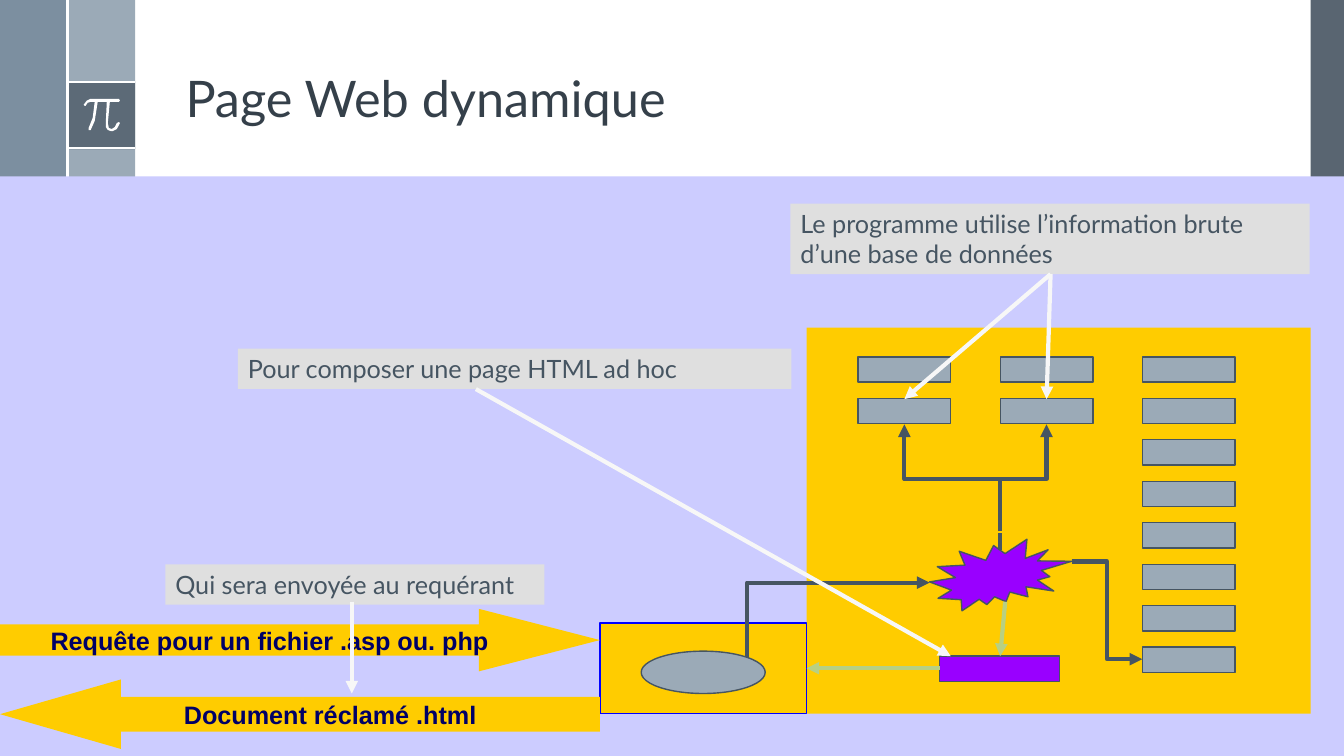
from lxml import etree
from pptx import Presentation
from pptx.dml.color import RGBColor
from pptx.enum.shapes import MSO_CONNECTOR as Connector, MSO_SHAPE as Shape
from pptx.enum.text import MSO_ANCHOR as Anchor, MSO_AUTO_SIZE as AutoSize, PP_ALIGN as Align
from pptx.oxml.ns import qn
from pptx.util import Inches, Pt

TITLE = "Page Web dynamique"
SLATE, GREY, YELLOW, PURPLE = "465562", "9BAAB7", "FFCC00", "9900FF"
PALE, GREEN, WHITE = "F7F7F7", "B8D082", "FFFFFF"

# left, top, width, height, colour, opacity in percent
SIDEBAR = [
    (13, 0, 0.33, 7.5, "475562", 90),
    (0.67, 0, 0.67, 7.5, GREY, 100),
    (0, 0, 0.67, 7.5, "6A8093", 88),
    (0.67, 0.81, 0.67, 0.67, "475562", 75),
]
SIDEBAR_LINES = [((0.67, 0.81), (1.34, 0.81)), ((0.67, 1.47), (1.34, 1.47)),
                 ((0.67, 0), (0.67, 7.5))]
PI_OUTLINE = [
    (1.18, 0.98), (0.9, 0.98), (0.86, 1), (0.83, 1.04), (0.84, 1.05), (0.85, 1.05),
    (0.87, 1.02), (0.9, 1.01), (0.94, 1.01), (0.92, 1.17), (0.88, 1.27), (0.88, 1.29),
    (0.9, 1.29), (0.94, 1.2), (0.97, 1.01), (1.06, 1.01), (1.05, 1.22), (1.05, 1.26),
    (1.07, 1.29), (1.1, 1.3), (1.12, 1.3), (1.16, 1.28), (1.19, 1.22), (1.18, 1.21),
    (1.16, 1.22), (1.14, 1.26), (1.11, 1.28), (1.08, 1.27), (1.07, 1.22), (1.09, 1.01),
    (1.18, 1.01), (1.19, 1),
]
BACKGROUND = (0, 1.75, 13.33, 5.75)
DATABASE = (8, 3.25, 5, 3.83)
SERVER = (5.95, 6.18, 2.05, 0.9)
SERVER_PAGE = (6.36, 6.46, 1.23, 0.42)
PROGRAM = (9.22, 5.35, 1.41, 0.71)
HTML_PAGE = (9.32, 6.51, 1.19, 0.25)

RECORD_LEFT, RECORD_TOP, COLUMN_STEP = 8.51, 3.54, 1.41
RECORD_SIZE = (0.92, 0.25)
ROW_STEP = (6.42 - RECORD_TOP) / 7
RECORDS_PER_COLUMN = [2, 2, 8]

# frame, text, wrapped, arrows that leave the note
NOTES = [
    ((7.84, 2.02, 5.15, 0.7), "Le programme utilise l’information brute d’une base de données",
     True, [((10.42, 2.72), (10.38, 3.96)), ((10.42, 2.72), (8.97, 3.96))]),
    ((2.36, 3.46, 5.49, 0.4), "Pour composer une page HTML ad hoc",
     True, [((4.72, 3.86), (9.43, 6.51))]),
    ((1.64, 5.6, 3.76, 0.4), "Qui sera envoyée au requérant", False, []),
]
# preset, frame, head length, text
MESSAGES = [
    (Shape.RIGHT_ARROW, (0, 6.04, 5.95, 0.62), 1.2, "Requête pour un fichier .asp ou. php"),
    (Shape.LEFT_ARROW, (0, 6.74, 5.95, 0.69), 1.2, "Document réclamé .html"),
]
SENT_ARROW = ((3.49, 5.97), (3.49, 6.88))
PAGE_ARROWS = [((9.97, 5.97), (9.92, 6.51)), ((9.32, 6.63), (8, 6.63))]

NOTE_FONT = {"size": Pt(18), "name": "Lato"}
MESSAGE_FONT = {"size": Pt(18), "name": "Arial", "bold": True}
TITLE_FONT = {"size": Pt(36), "name": "Lato"}


def rgb(colour):
    return RGBColor.from_string(colour)


def paint(shape, fill, line=None, opacity=100):
    shape.shadow.inherit = False
    shape.fill.solid()
    shape.fill.fore_color.rgb = rgb(fill)
    if opacity < 100:
        colour = shape._element.spPr.find(qn("a:solidFill"))[0]
        etree.SubElement(colour, qn("a:alpha"), val=str(opacity * 1000))
    if line:
        shape.line.color.rgb = rgb(line)
        shape.line.width = Pt(1)
    else:
        shape.line.fill.background()
    return shape


def add_box(frame, fill, line=None, opacity=100, preset=Shape.RECTANGLE):
    shape = slide.shapes.add_shape(preset, *map(Inches, frame))
    return paint(shape, fill, line, opacity)


def write(shape, text, font, colour, frame_format, align):
    for name, value in frame_format.items():
        setattr(shape.text_frame, name, value)
    paragraph = shape.text_frame.paragraphs[0]
    paragraph.text = text
    paragraph.alignment = align
    for name, value in font.items():
        setattr(paragraph.font, name, value)
    paragraph.font.color.rgb = rgb(colour)
    return paragraph


def add_line(start, end, colour, width=3, arrow=True, kind=Connector.STRAIGHT):
    line = slide.shapes.add_connector(kind, *map(Inches, start + end))
    line.line.color.rgb = rgb(colour)
    line.line.width = Pt(width)
    properties = line._element.spPr
    if arrow:
        etree.SubElement(properties.find(qn("a:ln")), qn("a:tailEnd"), type="triangle")
    etree.SubElement(properties, qn("a:effectLst"))
    return line


def add_rising_elbow(start, end, preset, middle=None):
    """Elbow arrow that leaves its start upwards: a horizontal elbow turned a quarter."""
    (x1, y1), (x2, y2) = start, end
    length, breadth = abs(y2 - y1), abs(x2 - x1)
    left, top = (x1 + x2 - length) / 2, (y1 + y2 - breadth) / 2
    elbow = add_line((left, top), (left + length, top + breadth), SLATE, kind=Connector.ELBOW)
    properties = elbow._element.spPr
    transform = properties.find(qn("a:xfrm"))
    turn = 270 if x2 > x1 else 90
    transform.set("rot", str(turn * 60000))
    if turn == 90:
        transform.set("flipH", "1")
    geometry = properties.find(qn("a:prstGeom"))
    geometry.set("prst", preset)
    if middle:
        guides = geometry.find(qn("a:avLst"))
        etree.SubElement(guides, qn("a:gd"), name="adj1", fmla=f"val {round(middle * 100000)}")


presentation = Presentation()
presentation.slide_width, presentation.slide_height = Inches(13.33), Inches(7.5)
slide = presentation.slides.add_slide(presentation.slide_layouts[5])

for *frame, colour, opacity in SIDEBAR:
    add_box(frame, colour, opacity=opacity)
for start, end in SIDEBAR_LINES:
    add_line(start, end, WHITE, 1.5, arrow=False)
pi_points = [(Inches(x), Inches(y)) for x, y in PI_OUTLINE]
builder = slide.shapes.build_freeform(*pi_points[0])
builder.add_line_segments(pi_points[1:], close=True)
paint(builder.convert_to_shape(), WHITE)

title = slide.shapes.title
title.left, title.top, title.width, title.height = map(Inches, (1.74, 0.19, 10.7, 1.13))
heading = write(title, TITLE, TITLE_FONT, "35404A",
                {"vertical_anchor": Anchor.BOTTOM, "auto_size": AutoSize.NONE,
                 "word_wrap": True}, Align.LEFT)
heading.line_spacing = 0.9

add_box(BACKGROUND, "CCCCFF")
add_box(DATABASE, YELLOW)
for column, count in enumerate(RECORDS_PER_COLUMN):
    for row in range(count):
        position = (RECORD_LEFT + column * COLUMN_STEP, RECORD_TOP + row * ROW_STEP)
        add_box(position + RECORD_SIZE, GREY, SLATE)

add_box(PROGRAM, PURPLE, SLATE, preset=Shape.EXPLOSION2)
add_line((9.92, 5.46), (9.92, 5.29), SLATE, arrow=False)
for record_x in (10.38, 8.97):
    add_rising_elbow((9.92, 5.27), (record_x, 4.21), "bentConnector3", 0.49)
add_line((10.63, 5.57), (11.33, 6.54), SLATE, kind=Connector.ELBOW)

add_box(SERVER, YELLOW, "0000FF")
add_box(SERVER_PAGE, GREY, SLATE, preset=Shape.OVAL)
add_rising_elbow((7.41, 6.52), (9.22, 5.78), "bentConnector2")
add_box(HTML_PAGE, PURPLE, SLATE)
for start, end in PAGE_ARROWS:
    add_line(start, end, GREEN)

for frame, text, wrapped, arrows in NOTES:
    write(add_box(frame, "DFDFDF"), text, NOTE_FONT, SLATE,
          {"vertical_anchor": Anchor.TOP, "auto_size": AutoSize.SHAPE_TO_FIT_TEXT,
           "word_wrap": wrapped}, Align.LEFT)
    for start, end in arrows:
        add_line(start, end, PALE)

for preset, frame, head, text in MESSAGES:
    message = add_box(frame, YELLOW, preset=preset)
    message.adjustments[1] = head / frame[3]
    write(message, text, MESSAGE_FONT, "000066",
          {"vertical_anchor": Anchor.MIDDLE, "word_wrap": False}, Align.CENTER)
add_line(*SENT_ARROW, PALE)

presentation.save("out.pptx")
